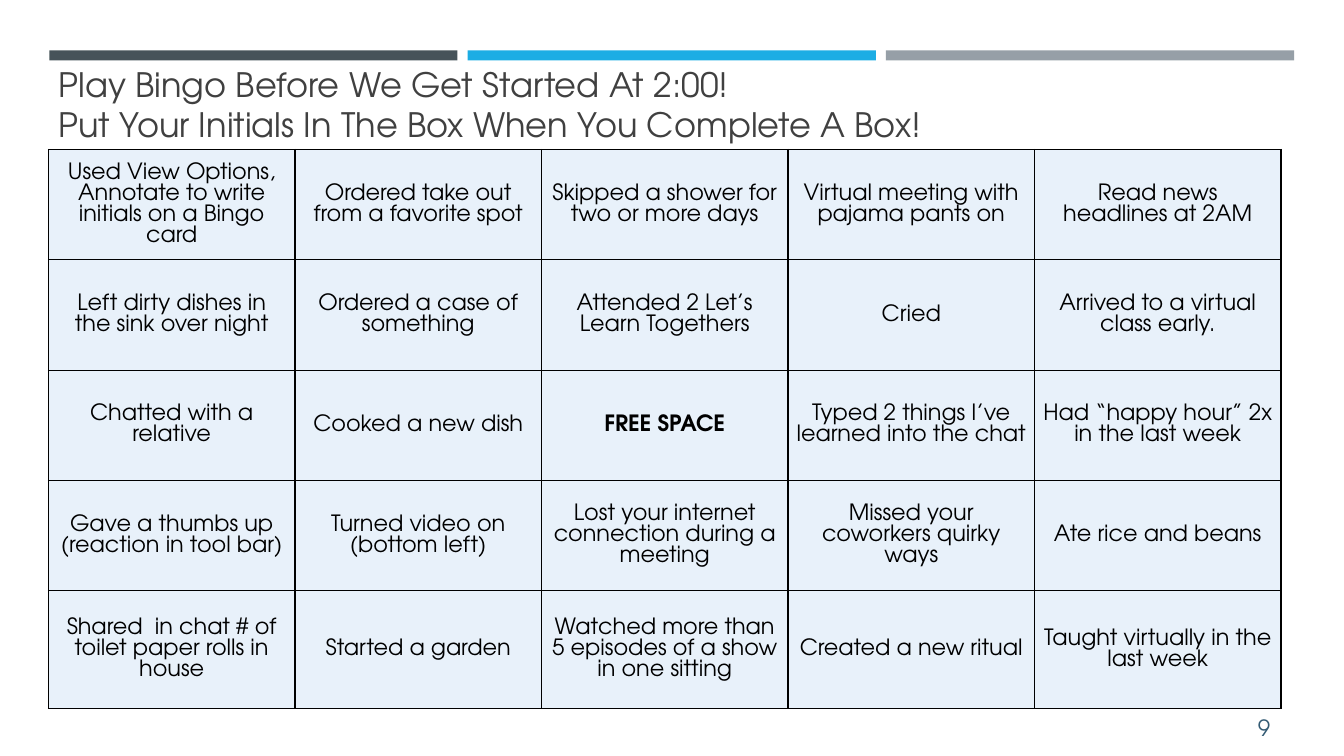
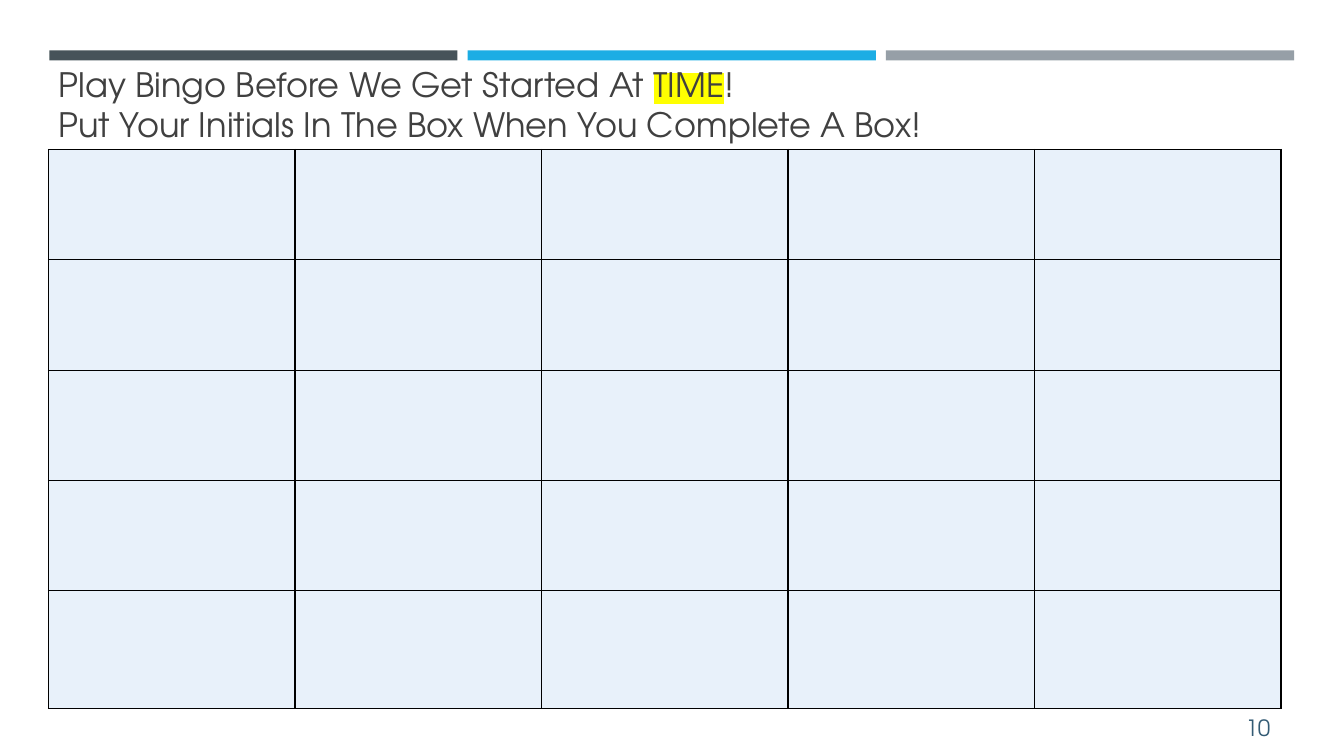
import pptx
import pptx.dml.color
import pptx.enum.shapes
import pptx.enum.text
import pptx.oxml
import pptx.oxml.ns
import pptx.util
from lxml import etree

Pt = pptx.util.Pt
RGBColor = pptx.dml.color.RGBColor
ALIGN = pptx.enum.text.PP_ALIGN
ANCHOR = pptx.enum.text.MSO_ANCHOR
qn = pptx.oxml.ns.qn

SLATE = RGBColor(0x46, 0x53, 0x59)
SKY = RGBColor(0x1C, 0xAD, 0xE4)
GREY = RGBColor(0x96, 0x9F, 0xA7)
TITLE_GREY = RGBColor(0x40, 0x40, 0x40)
NUMBER_BLUE = RGBColor(0x33, 0x5B, 0x74)
CELL_BLUE = RGBColor(0xE8, 0xF1, 0xFA)
BLACK = RGBColor(0, 0, 0)
YELLOW = RGBColor(0xFF, 0xFF, 0)

FREE_SPACE = "FREE SPACE"
BINGO_PROMPTS = [
    ["Used View Options, Annotate to write initials on a Bingo card",
     "Ordered take out from a favorite spot",
     "Skipped a shower for two or more days",
     "Virtual meeting with pajama pants on",
     "Read news headlines at 2AM"],
    ["Left dirty dishes in the sink over night",
     "Ordered a case of something",
     "Attended 2 Let’s Learn Togethers",
     "Cried",
     "Arrived to a virtual class early."],
    ["Chatted with a relative",
     "Cooked a new dish",
     FREE_SPACE,
     "Typed 2 things I’ve learned into the chat",
     "Had “happy hour” 2x in the last week"],
    ["Gave a thumbs up (reaction in tool bar)",
     "Turned video on (bottom left)",
     "Lost your internet connection during a meeting",
     "Missed your coworkers quirky ways",
     "Ate rice and beans"],
    ["Shared  in chat # of toilet paper rolls in house",
     "Started a garden",
     "Watched more than 5 episodes of a show in one sitting",
     "Created a new ritual",
     "Taught virtually in the last week"],
]
BLANK_CARD = [[""] * 5 for _ in range(5)]


class BingoDeck:
    FONT = "TeX Gyre Adventor"
    LEFT = 34.6
    COLUMN_WIDTH = 176.1
    ROW_HEIGHTS = [78.8] * 4 + [83.9]

    def __init__(self):
        self.prs = pptx.Presentation()
        self.prs.slide_width = Pt(960)
        self.prs.slide_height = Pt(540)
        self.slide = None

    def add_slide(self, number, start_time, prompts, highlight=None):
        self.slide = self.prs.slides.add_slide(self.prs.slide_layouts[5])
        self.add_bands()
        self.add_number(number)
        self.add_title(start_time, highlight)
        self.add_card(prompts)

    def style_run(self, run, size, color, bold=False):
        run.font.name = self.FONT
        run.font.size = Pt(size)
        run.font.bold = bold
        run.font.color.rgb = color

    def add_bands(self):
        for index, color in enumerate((SLATE, SKY, GREY)):
            band = self.slide.shapes.add_shape(
                pptx.enum.shapes.MSO_SHAPE.RECTANGLE,
                Pt(35.2 + index * 298.8), Pt(36), Pt(291.6), Pt(7.2))
            band.shadow.inherit = False
            band.fill.solid()
            band.fill.fore_color.rgb = color
            band.line.fill.background()

    def add_number(self, number):
        box = self.slide.shapes.add_textbox(Pt(831.6), Pt(505), Pt(82.8), Pt(28.8))
        frame = box.text_frame
        frame.word_wrap = True
        frame.vertical_anchor = ANCHOR.MIDDLE
        frame.text = str(number)
        paragraph = frame.paragraphs[0]
        paragraph.alignment = ALIGN.RIGHT
        self.style_run(paragraph.runs[0], 16, NUMBER_BLUE)

    def add_title(self, start_time, highlight):
        title = self.slide.shapes.title
        title.left, title.top = Pt(self.LEFT), Pt(49)
        title.width, title.height = Pt(868.3), Pt(57.6)
        frame = title.text_frame
        frame.auto_size = pptx.enum.text.MSO_AUTO_SIZE.NONE
        frame.word_wrap = True
        frame.vertical_anchor = ANCHOR.BOTTOM
        paragraph = frame.paragraphs[0]
        paragraph.alignment = ALIGN.LEFT
        paragraph.line_spacing = Pt(28.6)
        paragraph.text = "Play Bingo Before We Get Started At "
        time_run = paragraph.add_run()
        time_run.text = start_time
        paragraph.add_run().text = "! "
        paragraph.add_line_break()
        paragraph.add_run().text = "Put Your Initials In The Box When You Complete A Box!"
        for run in paragraph.runs:
            self.style_run(run, 24, TITLE_GREY)
        if highlight is not None:
            self.highlight_run(time_run, highlight)

    def highlight_run(self, run, color):
        mark = pptx.oxml.parse_xml(
            f'<a:highlight {pptx.oxml.ns.nsdecls("a")}>'
            f'<a:srgbClr val="{color}"/></a:highlight>')
        run._r.find(qn("a:rPr")).find(qn("a:solidFill")).addnext(mark)

    def add_card(self, prompts):
        columns = len(prompts[0])
        table = self.slide.shapes.add_table(
            len(prompts), columns, Pt(self.LEFT), Pt(106.8),
            Pt(columns * self.COLUMN_WIDTH), Pt(sum(self.ROW_HEIGHTS))).table
        table.first_row = False
        table.horz_banding = False
        for column in table.columns:
            column.width = Pt(self.COLUMN_WIDTH)
        for row, height, row_prompts in zip(table.rows, self.ROW_HEIGHTS, prompts):
            row.height = Pt(height)
            for cell, prompt in zip(row.cells, row_prompts):
                self.fill_cell(cell, prompt)

    def fill_cell(self, cell, prompt):
        cell.margin_left = cell.margin_right = Pt(5.76)
        cell.margin_top = cell.margin_bottom = Pt(2.88)
        cell.vertical_anchor = ANCHOR.MIDDLE
        self.border_cell(cell)
        cell.fill.solid()
        cell.fill.fore_color.rgb = CELL_BLUE
        cell.text_frame.text = prompt
        paragraph = cell.text_frame.paragraphs[0]
        paragraph.alignment = ALIGN.CENTER
        paragraph.line_spacing = Pt(15)
        for run in paragraph.runs:
            self.style_run(run, 16, BLACK, bold=prompt == FREE_SPACE)

    def border_cell(self, cell):
        properties = cell._tc.get_or_add_tcPr()
        for side in ("L", "R", "T", "B"):
            line = etree.SubElement(properties, qn(f"a:ln{side}"), w=str(Pt(1)))
            fill = etree.SubElement(line, qn("a:solidFill"))
            etree.SubElement(fill, qn("a:srgbClr"), val=str(BLACK))


def main():
    deck = BingoDeck()
    deck.add_slide(9, "2:00", BINGO_PROMPTS)
    deck.add_slide(10, "TIME", BLANK_CARD, highlight=YELLOW)
    deck.prs.save("out.pptx")


if __name__ == "__main__":
    main()
